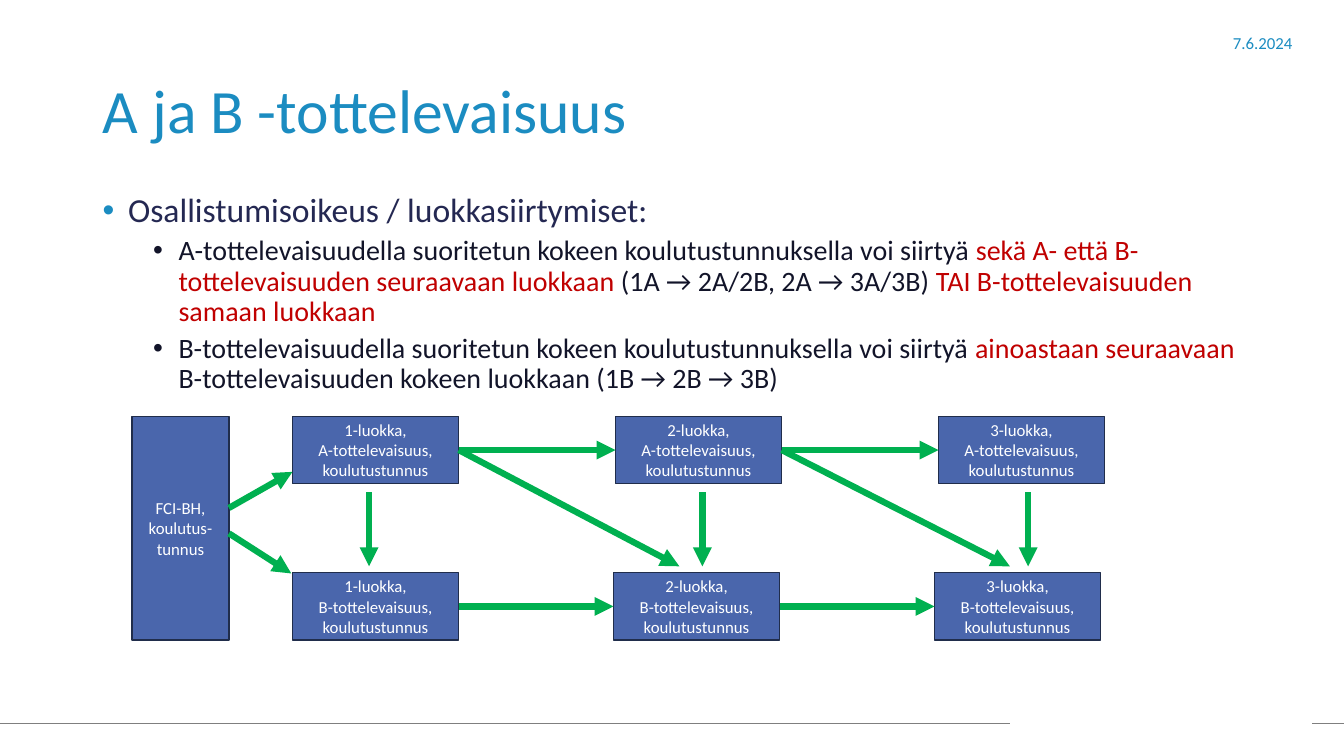
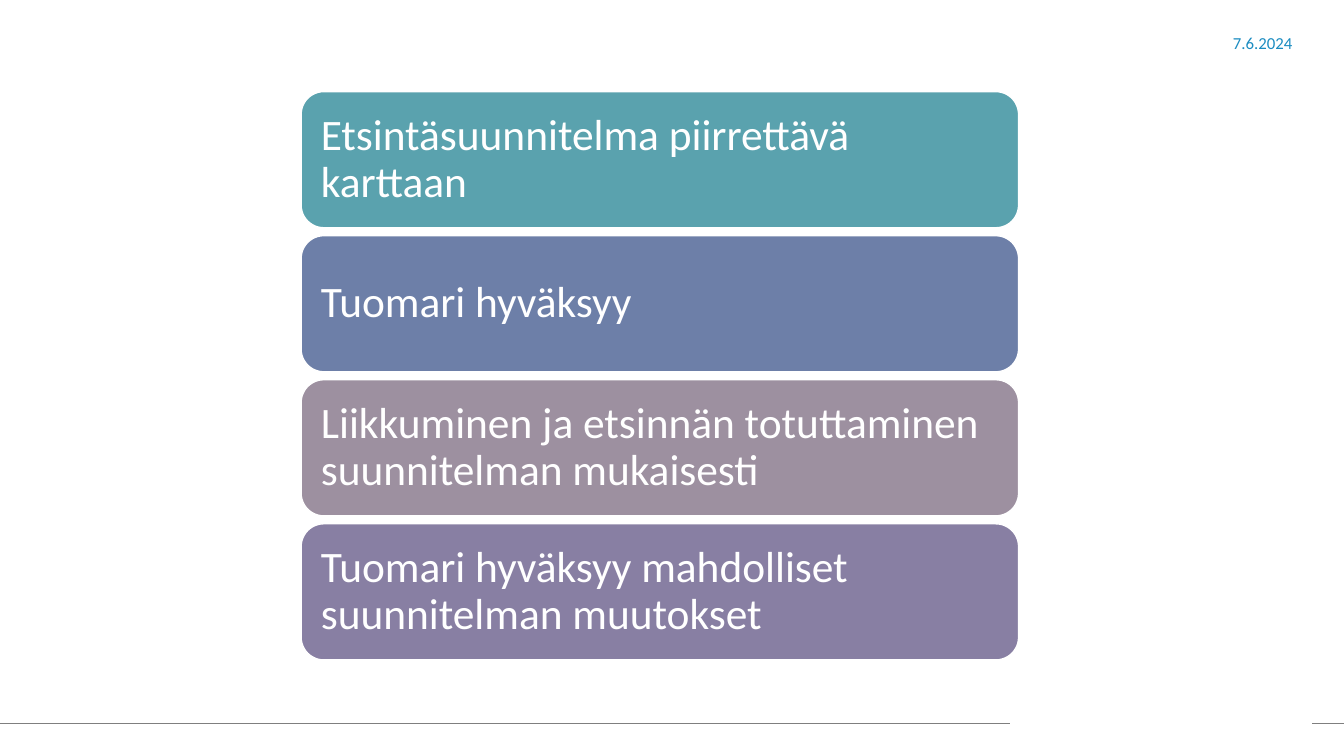
from lxml.etree import SubElement as Sub
from pptx import Presentation
from pptx.dml.color import RGBColor
from pptx.enum.shapes import MSO_CONNECTOR as Link, MSO_SHAPE as Kind
from pptx.enum.text import MSO_ANCHOR as Anchor, MSO_AUTO_SIZE as Auto, PP_ALIGN as Align
from pptx.oxml.ns import qn
from pptx.util import Cm, Pt

# Content
COLORS = {
    "blue": "1B8CC1", "navy": "242852", "ink": "121429", "red": "C00000",
    "box": "4A66AC", "edge": "202D4B", "green": "00B050", "rule": "7F7F7F",
    "white": "FFFFFF", "teal": "5AA2AE", "steel": "6D7FA8",
    "mauve": "9D90A0", "violet": "887FA3",
}
FONT = "Calibri"
WIDE, HIGH = 33.87, 19.05
DATE = "7.6.2024"
TITLE = "A ja B -tottelevaisuus"
BODY = [
    [("Osallistumisoikeus / luokkasiirtymiset:", "navy")],
    [("A-tottelevaisuudella suoritetun kokeen koulutustunnuksella voi siirtyä ", "ink"),
     ("sekä A- että B-tottelevaisuuden seuraavaan luokkaan", "red"),
     (" (1A → 2A/2B, 2A → 3A/3B) ", "ink"),
     ("TAI B-tottelevaisuuden samaan luokkaan", "red")],
    [("B-tottelevaisuudella suoritetun kokeen koulutustunnuksella voi siirtyä ", "ink"),
     ("ainoastaan seuraavaan", "red"),
     (" B-tottelevaisuuden kokeen luokkaan (1B → 2B → 3B)", "ink")],
]
# Per paragraph: size, left indent, space before, bullet colour
LEVELS = [(24, 0.64, 0, "blue"), (20, 1.91, 5, "ink"), (20, 1.91, 5, "ink")]
START = ["FCI-BH,", "koulutus-", "tunnus"]
ROWS = {"A": (10.49, 8.14), "B": (14.43, 8.09)}  # top, step
STEPS = [
    ("Etsintäsuunnitelma piirrettävä karttaan", "teal"),
    ("Tuomari hyväksyy", "steel"),
    ("Liikkuminen ja etsinnän totuttaminen suunnitelman mukaisesti", "mauve"),
    ("Tuomari hyväksyy mahdolliset suunnitelman muutokset", "violet"),
]


def rgb(name):
    return RGBColor.from_string(COLORS[name])


def write(shape, paras, size=12, color="white", align=Align.LEFT,
          anchor=Anchor.MIDDLE, line=1.0, inset=None, levels=()):
    """Fill a shape with paragraphs: strings, or lists of (text, colour)."""
    frame = shape.text_frame
    frame.word_wrap, frame.auto_size = True, Auto.NONE
    frame.vertical_anchor = anchor
    if inset is not None:
        frame.margin_left = frame.margin_right = Cm(inset)
        frame.margin_top = frame.margin_bottom = Cm(inset)
    for i, runs in enumerate(paras):
        para = frame.add_paragraph() if i else frame.paragraphs[0]
        para.alignment, para.line_spacing = align, line
        points = size
        if levels:
            points, left, before, dot = levels[i]
            bullet(para, left, dot)
            para.space_before = Pt(before)
        for text, tone in [(runs, color)] if isinstance(runs, str) else runs:
            run = para.add_run()
            run.text = text
            run.font.name, run.font.size = FONT, Pt(points)
            run.font.color.rgb = rgb(tone)


def bullet(para, left, color):
    props = para._p.get_or_add_pPr()
    props.set("marL", str(Cm(left)))
    props.set("indent", str(-Cm(0.64)))
    Sub(Sub(props, qn("a:buClr")), qn("a:srgbClr"), val=COLORS[color])
    Sub(props, qn("a:buFont"), typeface="Arial")
    Sub(props, qn("a:buChar"), char="•")


def place(shape, *area):
    shape.left, shape.top, shape.width, shape.height = map(Cm, area)


def label(slide, area, paras, **style):
    box = slide.shapes.add_textbox(*map(Cm, area))
    write(box, paras, **style)


def block(slide, area, paras, kind=Kind.RECTANGLE, fill="box", edge="edge", **style):
    shape = slide.shapes.add_shape(kind, *map(Cm, area))
    shape.shadow.inherit = False
    shape.fill.solid()
    shape.fill.fore_color.rgb = rgb(fill)
    shape.line.color.rgb, shape.line.width = rgb(edge), Pt(1)
    write(shape, paras, **style)
    return shape


def rule(slide, start, end, color="rule", width=0.75):
    line = slide.shapes.add_connector(Link.STRAIGHT, *map(Cm, start + end))
    line.line.color.rgb, line.line.width = rgb(color), Pt(width)
    Sub(line._element.spPr, qn("a:effectLst"))
    return line


def arrow(slide, start, end):
    """Each end is a point, or a (box, side) pair to join."""
    ends = [spot if isinstance(spot[0], (int, float)) else (0, 0)
            for spot in (start, end)]
    line = rule(slide, *ends, color="green", width=4.5)
    Sub(line.line._get_or_add_ln(), qn("a:tailEnd"), type="triangle")
    for spot, join in ((start, line.begin_connect), (end, line.end_connect)):
        if not isinstance(spot[0], (int, float)):
            join(*spot)


def page(deck, layout):
    """Add a slide with the shared date and bottom rules."""
    slide = deck.slides.add_slide(deck.slide_layouts[layout])
    rule(slide, (0, 18.24), (25.45, 18.24))
    rule(slide, (33.07, 18.24), (WIDE, 18.24))
    label(slide, (28.78, 0.56, 4.04, 1.02), [DATE], color="blue", align=Align.RIGHT)
    return slide


def classes(deck):
    slide = page(deck, 5)
    title = slide.shapes.title
    place(title, 2.34, 1.02, 29.21, 3.68)
    write(title, [TITLE], size=44, color="blue", line=0.9)
    label(slide, (2.34, 4.75, 29.21, 5.6), BODY, anchor=Anchor.TOP,
          line=0.9, levels=LEVELS)

    # Class boxes
    block(slide, (3.33, 10.49, 2.44, 5.64), START, align=Align.CENTER)
    grid = {}
    for row, (top, step) in ROWS.items():
        grid[row] = [
            block(slide, (7.37 + i * step, top, 4.19, 1.7),
                  [f"{i + 1}-luokka,", f"{row}-tottelevaisuus,", "koulutustunnus"],
                  align=Align.CENTER)
            for i in range(3)]

    # Arrows: from the start, along the rows, across and down
    arrow(slide, (5.77, 12.8), (7.37, 11.89))
    arrow(slide, (5.77, 13.44), (7.34, 14.45))
    for boxes in grid.values():
        for here, after in zip(boxes, boxes[1:]):
            arrow(slide, (here, 3), (after, 1))
    for box, x in zip(grid["A"], (17.12, 25.45)):
        arrow(slide, (box, 3), (x, 14.27))
    for x in (9.3, 17.7, 25.91):
        arrow(slide, (x, 12.4), (x, 14.27))


def search(deck):
    slide = page(deck, 6)
    for i, (text, fill) in enumerate(STEPS):
        block(slide, (7.59, 2.31 + i * 3.63, 18.08, 3.43), [text],
              kind=Kind.ROUNDED_RECTANGLE, fill=fill, edge="white",
              size=31, line=0.9, inset=0.33)


def main():
    deck = Presentation()
    deck.slide_width, deck.slide_height = Cm(WIDE), Cm(HIGH)
    classes(deck)
    search(deck)
    deck.save("out.pptx")


if __name__ == "__main__":
    main()
